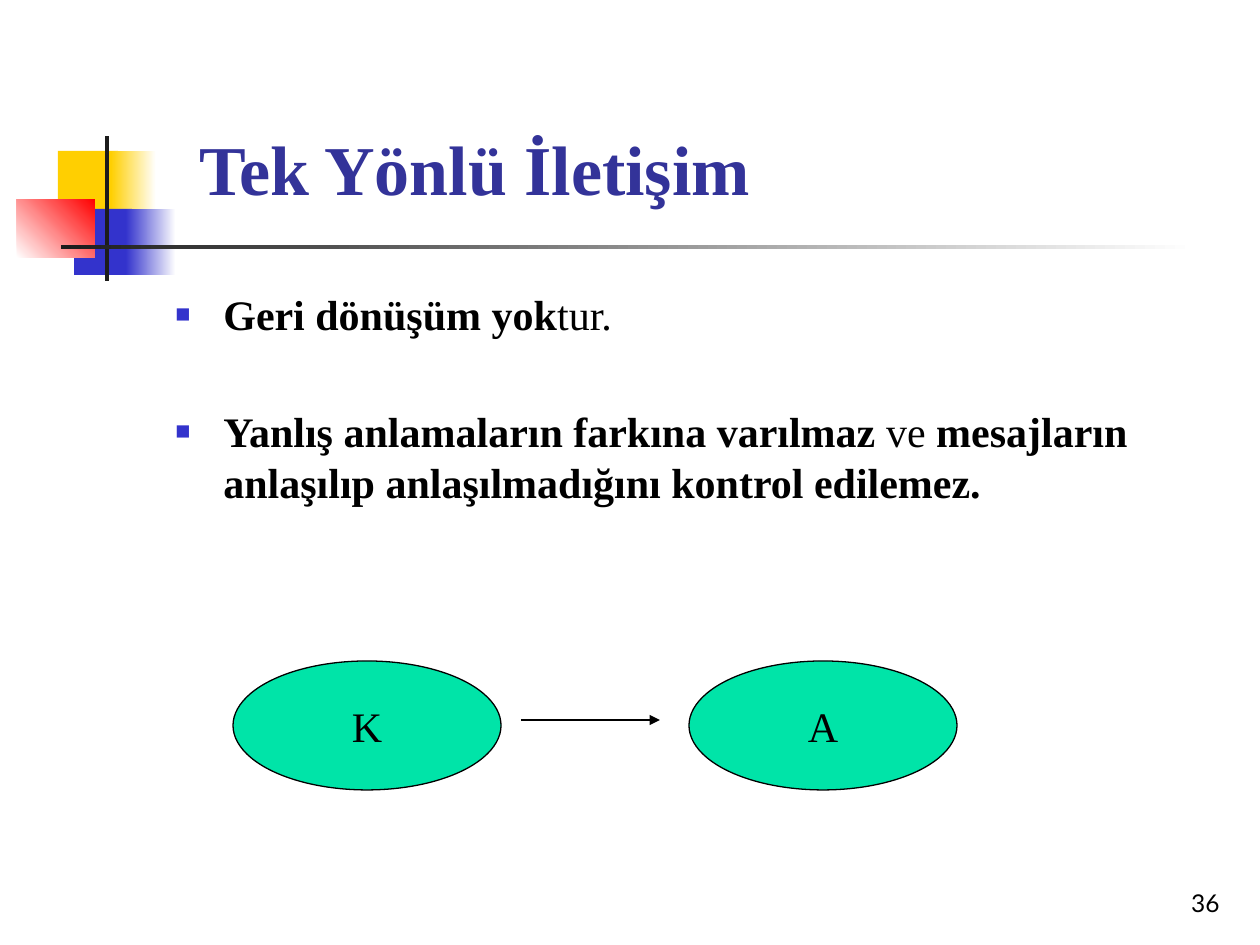
from lxml import etree
from pptx import Presentation
from pptx.dml.color import RGBColor
from pptx.enum.shapes import MSO_CONNECTOR, MSO_SHAPE
from pptx.enum.text import MSO_ANCHOR as Anchor, PP_ALIGN as Align
from pptx.oxml.ns import qn
from pptx.util import Emu, Pt

PX_PER_INCH = 126
SERIF, SANS = "Times New Roman", "Lato"

BLACK = RGBColor(0x00, 0x00, 0x00)
WHITE = RGBColor(0xFF, 0xFF, 0xFF)
CHARCOAL = RGBColor(0x1C, 0x1C, 0x1C)
YELLOW = RGBColor(0xFF, 0xCF, 0x01)
BLUE = RGBColor(0x33, 0x33, 0xCC)
RED = RGBColor(0xFF, 0x00, 0x00)
INDIGO = RGBColor(0x33, 0x33, 0x99)
GREEN = RGBColor(0x00, 0xE4, 0xA8)


def px(length):
    return Emu(round(length * 914400 / PX_PER_INCH))


def add_run(paragraph, text, *, size=24, font=SERIF, color=BLACK, bold=False):
    run = paragraph.add_run()
    run.text = text
    run.font.size = Pt(size)
    run.font.name = font
    run.font.color.rgb = color
    run.font.bold = bold


class SlideBuilder:
    """Holds the current slide and draws each kind of element in its style."""

    line_width = Pt(0.75)
    bullet_indent = 48

    def __init__(self, slide):
        self.slide = slide

    def shape(self, kind, box, fill, fade_to=None, angle=0):
        shape = self.slide.shapes.add_shape(kind, *map(px, box))
        shape.shadow.inherit = False
        shape.line.fill.background()
        if fade_to is None:
            shape.fill.solid()
            shape.fill.fore_color.rgb = fill
        else:
            shape.fill.gradient()
            shape.fill.gradient_angle = angle
            for stop, color, position in zip(
                    shape.fill.gradient_stops, (fill, fade_to), (0, 1)):
                stop.color.rgb = color
                stop.position = position
        return shape

    def bar(self, box, fill, fade_to=None, angle=0):
        return self.shape(MSO_SHAPE.RECTANGLE, box, fill, fade_to, angle)

    def node(self, box, label):
        shape = self.shape(MSO_SHAPE.OVAL, box, GREEN)
        shape.line.color.rgb = BLACK
        shape.line.width = self.line_width
        frame = shape.text_frame
        frame.word_wrap = False
        frame.vertical_anchor = Anchor.MIDDLE
        frame.paragraphs[0].alignment = Align.CENTER
        add_run(frame.paragraphs[0], label)

    def text_frame(self, box, anchor=Anchor.TOP):
        frame = self.slide.shapes.add_textbox(*map(px, box)).text_frame
        frame.word_wrap = True
        frame.vertical_anchor = anchor
        return frame

    def label(self, box, text, align=Align.LEFT, **style):
        paragraph = self.text_frame(box, Anchor.BOTTOM).paragraphs[0]
        paragraph.alignment = align
        add_run(paragraph, text, **style)

    def bullets(self, box, items, first_gap, gap):
        frame = self.text_frame(box)
        for index, pieces in enumerate(items):
            paragraph = frame.add_paragraph() if index else frame.paragraphs[0]
            paragraph.space_before = Pt(gap if index else first_gap)
            paragraph.line_spacing = Pt(29)
            for text, bold in pieces:
                add_run(paragraph, text, bold=bold)
            self.square_bullet(paragraph)

    def square_bullet(self, paragraph):
        properties = paragraph._p.get_or_add_pPr()
        properties.set("marL", str(px(self.bullet_indent)))
        properties.set("indent", str(px(-self.bullet_indent)))
        color = etree.SubElement(properties, qn("a:buClr"))
        etree.SubElement(color, qn("a:srgbClr"), val=str(BLUE))
        etree.SubElement(properties, qn("a:buSzPct"), val="60000")
        etree.SubElement(properties, qn("a:buFont"), typeface=SERIF)
        etree.SubElement(properties, qn("a:buChar"), char="■")

    def arrow(self, left, right, y):
        connector = self.slide.shapes.add_connector(
            MSO_CONNECTOR.STRAIGHT, px(left), px(y), px(right), px(y))
        connector.line.color.rgb = BLACK
        connector.line.width = self.line_width
        line = connector.line._get_or_add_ln()
        etree.SubElement(line, qn("a:tailEnd"), type="triangle")
        etree.SubElement(connector._element.spPr, qn("a:effectLst"))


def main():
    presentation = Presentation()
    presentation.slide_width, presentation.slide_height = px(1260), px(945)
    builder = SlideBuilder(
        presentation.slides.add_slide(presentation.slide_layouts[6]))

    # Corner ornament: fading squares crossed by two bars
    builder.bar((58, 151, 60, 66), YELLOW)
    builder.bar((111, 151, 45, 66), YELLOW, WHITE)
    builder.bar((74, 209, 58, 66), BLUE)
    builder.bar((126, 209, 50, 66), BLUE, WHITE)
    builder.bar((17, 199, 78, 59), WHITE, RED, angle=45)
    builder.bar((105, 136, 4, 145), CHARCOAL)
    builder.bar((61, 245, 1134, 4), CHARCOAL, WHITE)

    # Slide number and title
    builder.label((970, 861, 262, 63), "36", Align.RIGHT, size=14, font=SANS)
    builder.label((187, 115, 642, 101), "Tek Yönlü İletişim",
                  size=40, color=INDIGO, bold=True)

    # Main points
    builder.bullets((163, 282, 1071, 563), [
        [("Geri dönüşüm yok", True), ("tur.", False)],
        [("Yanlış anlamaların farkına varılmaz", True), (" ve ", False),
         ("mesajların anlaşılıp anlaşılmadığını kontrol edilemez.", True)],
    ], first_gap=5, gap=38)

    # One-way message from K to A
    for left, name in ((233, "K"), (689, "A")):
        builder.node((left, 661, 268, 129), name)
    builder.arrow(521, 660, 720)

    presentation.save("out.pptx")


if __name__ == "__main__":
    main()
